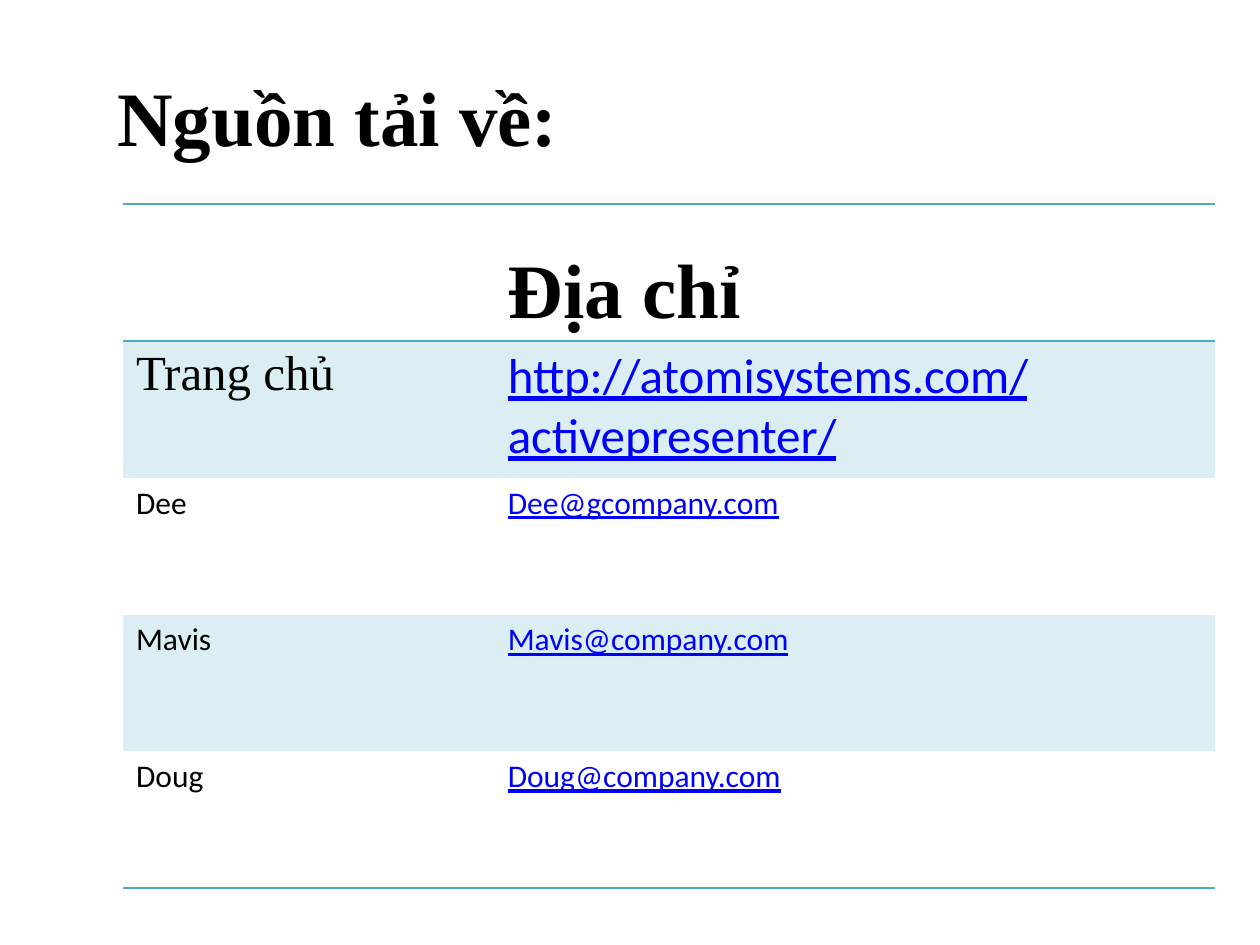
from lxml import etree
from pptx import Presentation
from pptx.dml.color import RGBColor
from pptx.enum.text import MSO_ANCHOR, PP_ALIGN
from pptx.oxml.ns import qn
from pptx.util import Inches, Pt

LEFT = PP_ALIGN.LEFT
TOP, MIDDLE, BOTTOM = MSO_ANCHOR.TOP, MSO_ANCHOR.MIDDLE, MSO_ANCHOR.BOTTOM
SERIF, SANS = "Times New Roman", "Calibri"
BLACK, LINK, RULE, BAND = "000000", "0000FF", "4BACC6", "DBEEF4"
NO_STYLE = "{2D5ABB26-0587-4C30-8999-92F81FD0307C}"

# Content: heading row, then (label, address, size, label font)
TITLE = "Nguồn tải về:"
HEADING = "Địa chỉ"
SOURCES = [
    ("Trang chủ", "http://atomisystems.com/activepresenter/", 28, SERIF),
    ("Dee", "Dee@gcompany.com", 18, SANS),
    ("Mavis", "Mavis@company.com", 18, SANS),
    ("Doug", "Doug@company.com", 18, SANS),
]
COLUMN_WIDTHS = (2.95, 5.71)
TABLE_HEIGHT = 5.43


def color(value):
    return RGBColor.from_string(value)


def write(frame, text, size, name, ink=BLACK, bold=False, underline=False):
    paragraph = frame.paragraphs[0]
    paragraph.text = text
    paragraph.alignment = LEFT
    font = paragraph.font
    font.size, font.name, font.bold = Pt(size), name, bold
    font.underline = underline
    font.color.rgb = color(ink)


def add_borders(cell, tags):
    """Rule the given edges; lines come before the fill in a:tcPr."""
    properties = cell._tc.get_or_add_tcPr()
    for position, tag in enumerate(tags):
        line = etree.Element(qn(tag), w=str(Pt(1)))
        fill = etree.SubElement(line, qn("a:solidFill"))
        etree.SubElement(fill, qn("a:srgbClr"), val=RULE)
        properties.insert(position, line)


presentation = Presentation()
presentation.slide_width, presentation.slide_height = Inches(10), Inches(7.5)
slide = presentation.slides.add_slide(presentation.slide_layouts[5])

# Title
title = slide.shapes.title
title.left, title.top = Inches(0.83), Inches(0.29)
title.width, title.height = Inches(8.83), Inches(1.25)
title.text_frame.vertical_anchor = MIDDLE
write(title.text_frame, TITLE, 44, SERIF, bold=True)

# Table grid
row_count = len(SOURCES) + 1
table_frame = slide.shapes.add_table(
    row_count, len(COLUMN_WIDTHS), Inches(0.98), Inches(1.62),
    Inches(sum(COLUMN_WIDTHS)), Inches(TABLE_HEIGHT))
table = table_frame.table
table.first_row = table.horz_banding = False
table._tbl.tblPr.find(qn("a:tableStyleId")).text = NO_STYLE
for column, width in zip(table.columns, COLUMN_WIDTHS):
    column.width = Inches(width)
for row in table.rows:
    row.height = Inches(TABLE_HEIGHT / row_count)

# Table text
write(table.cell(0, 1).text_frame, HEADING, 44, SERIF, bold=True)
for index, (label, address, size, label_font) in enumerate(SOURCES, 1):
    write(table.cell(index, 0).text_frame, label, size, label_font)
    write(table.cell(index, 1).text_frame, address, size, SANS, LINK, underline=True)

# Bands and rules
for index, row in enumerate(table.rows):
    for cell in row.cells:
        cell.vertical_anchor = TOP if index else BOTTOM
        if index % 2:
            cell.fill.solid()
            cell.fill.fore_color.rgb = color(BAND)
        else:
            cell.fill.background()
        if index == 0:
            add_borders(cell, ("a:lnT", "a:lnB"))
        elif index == row_count - 1:
            add_borders(cell, ("a:lnB",))

presentation.save("out.pptx")
